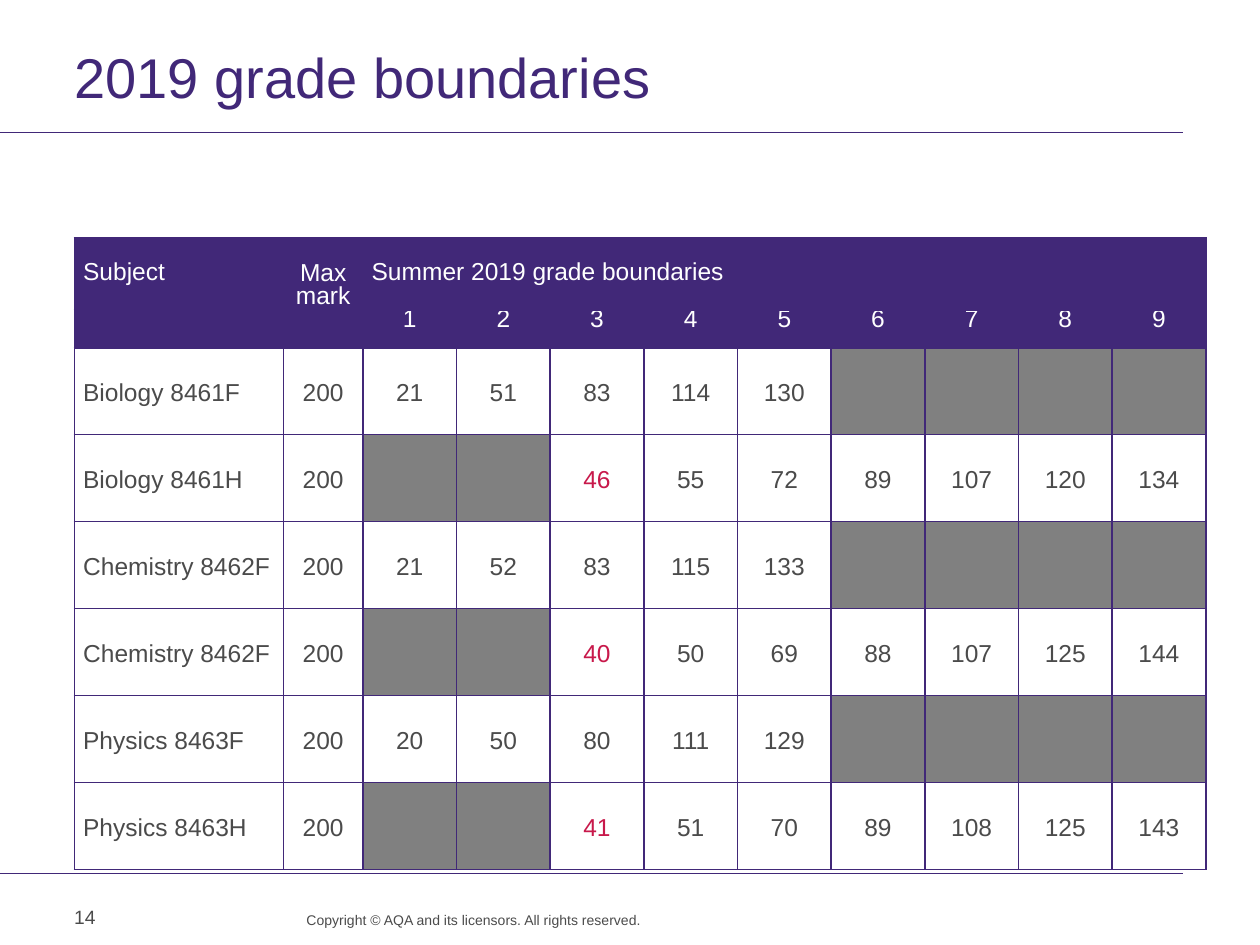
from lxml import etree
from pptx import Presentation
from pptx import util as u
from pptx.dml.color import RGBColor
from pptx.enum import shapes, text
from pptx.oxml import ns

PURPLE, GREY, RED, SHADE, WHITE = "412878", "4B4B4B", "C8194B", "808080", "FFFFFF"
LEFT, CENTRE, RIGHT = text.PP_ALIGN.LEFT, text.PP_ALIGN.CENTER, text.PP_ALIGN.RIGHT
TOP, MIDDLE = text.MSO_ANCHOR.TOP, text.MSO_ANCHOR.MIDDLE
GRADES = range(1, 10)
MAX_MARK = 200
BOUNDARIES = [
    ("Biology 8461F", 1, [21, 51, 83, 114, 130]),
    ("Biology 8461H", 3, [46, 55, 72, 89, 107, 120, 134]),
    ("Chemistry 8462F", 1, [21, 52, 83, 115, 133]),
    ("Chemistry 8462F", 3, [40, 50, 69, 88, 107, 125, 144]),
    ("Physics 8463F", 1, [20, 50, 80, 111, 129]),
    ("Physics 8463H", 3, [41, 51, 70, 89, 108, 125, 143]),
]


def rgb(value):
    """Return the colour for a hex string."""
    return RGBColor.from_string(value)


def write(frame, words, size, colour, align=LEFT, spacing=None):
    """Write one run of text into the first paragraph of a frame."""
    para = frame.paragraphs[0]
    para.alignment = align
    if spacing:
        para.line_spacing = spacing
    if words:
        span = para.add_run()
        span.text = words
        span.font.name = "Arial"
        span.font.size = u.Pt(size)
        span.font.color.rgb = rgb(colour)


def add_text(page, place, words, size, colour, insets=(0, 0, 0, 0),
             anchor=TOP, align=LEFT, spacing=None):
    """Add a wrapped text box."""
    box = page.shapes.add_textbox(*map(u.Inches, place))
    frame = box.text_frame
    frame.word_wrap = True
    frame.vertical_anchor = anchor
    (frame.margin_left, frame.margin_top,
     frame.margin_right, frame.margin_bottom) = map(u.Inches, insets)
    write(frame, words, size, colour, align, spacing)


def add_rule(page, height):
    """Add a thin rule from the left edge of the page."""
    rule = page.shapes.add_connector(
        shapes.MSO_CONNECTOR.STRAIGHT, 0, u.Inches(height), u.Inches(9.39), u.Inches(height))
    rule.line.color.rgb = rgb(PURPLE)
    rule.line.width = u.Pt(0.6)
    etree.SubElement(rule._element.spPr, ns.qn("a:effectLst"))


def add_borders(cell):
    """Draw a purple border on every side of a cell."""
    properties = cell._tc.get_or_add_tcPr()
    for side in ("lnL", "lnR", "lnT", "lnB"):
        line = etree.SubElement(properties, ns.qn(f"a:{side}"), w=str(u.Pt(1)))
        fill = etree.SubElement(line, ns.qn("a:solidFill"))
        etree.SubElement(fill, ns.qn("a:srgbClr"), val=PURPLE)


def style_cell(cell, words, fill, colour=GREY, align=CENTRE, spacing=1.15,
               anchor=MIDDLE, top=0):
    """Set the border, fill and text of a table cell."""
    add_borders(cell)
    cell.fill.solid()
    cell.fill.fore_color.rgb = rgb(fill)
    cell.margin_left = cell.margin_right = u.Inches(0.07)
    cell.margin_top, cell.margin_bottom = u.Inches(top), 0
    cell.vertical_anchor = anchor
    write(cell.text_frame, words, 14, colour, align, spacing)


def fill_header(table):
    """Fill the two header rows."""
    header = {"fill": PURPLE, "colour": WHITE, "spacing": u.Pt(13)}
    table.cell(0, 2).merge(table.cell(0, 10))
    titles = ["Subject", "Max mark", "Summer 2019 grade boundaries"] + [""] * 8
    for column, title in enumerate(titles):
        is_mark = column == 1
        style_cell(table.cell(0, column), title, align=CENTRE if is_mark else LEFT,
                   top=0.2 if is_mark else 0, **header)
    for column, label in enumerate(["", "", *map(str, GRADES)]):
        style_cell(table.cell(1, column), label, anchor=TOP, **header)


def fill_subject(table, row, subject, first_grade, marks):
    """Fill one subject row, shading the grades that are not awarded."""
    style_cell(table.cell(row, 0), subject, WHITE, align=LEFT)
    style_cell(table.cell(row, 1), str(MAX_MARK), WHITE)
    awarded = dict(enumerate(marks, first_grade))
    for grade in GRADES:
        colour = RED if grade == first_grade == 3 else GREY
        words = str(awarded.get(grade, ""))
        style_cell(table.cell(row, grade + 1), words, WHITE if words else SHADE, colour)


def add_grade_table(page):
    """Add the table of grade boundaries."""
    widths = [1.66, 0.63] + [6.69 / 9] * 9
    heights = [0.57, 0.19] + [0.69] * len(BOUNDARIES)
    table = page.shapes.add_table(
        len(heights), len(widths), u.Inches(0.59), u.Inches(1.89),
        u.Inches(sum(widths)), u.Inches(sum(heights))).table
    table.first_row = table.horz_banding = False
    for column, width in zip(table.columns, widths):
        column.width = u.Inches(width)
    for row, height in zip(table.rows, heights):
        row.height = u.Inches(height)
    fill_header(table)
    for row, entry in enumerate(BOUNDARIES, 2):
        fill_subject(table, row, *entry)


def main():
    """Build and save the slide."""
    deck = Presentation()
    deck.slide_width, deck.slide_height = u.Inches(10), u.Inches(7.5)
    page = deck.slides.add_slide(deck.slide_layouts[6])
    for height in (1.05, 6.93):
        add_rule(page, height)
    add_text(page, (0.59, 0.48, 8.8, 0.47), "2019 grade boundaries", 32, PURPLE,
             insets=(0, 0, 0.1, 0), spacing=u.Pt(28))
    add_text(page, (2.16, 7.23, 2.93, 0.26),
             "Copyright © AQA and its licensors. All rights reserved.", 8, GREY,
             align=RIGHT, spacing=u.Pt(10))
    add_text(page, (0.49, 7.08, 0.76, 0.4), "14", 11, GREY,
             insets=(0.1, 0.05, 0.1, 0.05), anchor=MIDDLE)
    add_grade_table(page)
    deck.save("out.pptx")


if __name__ == "__main__":
    main()
